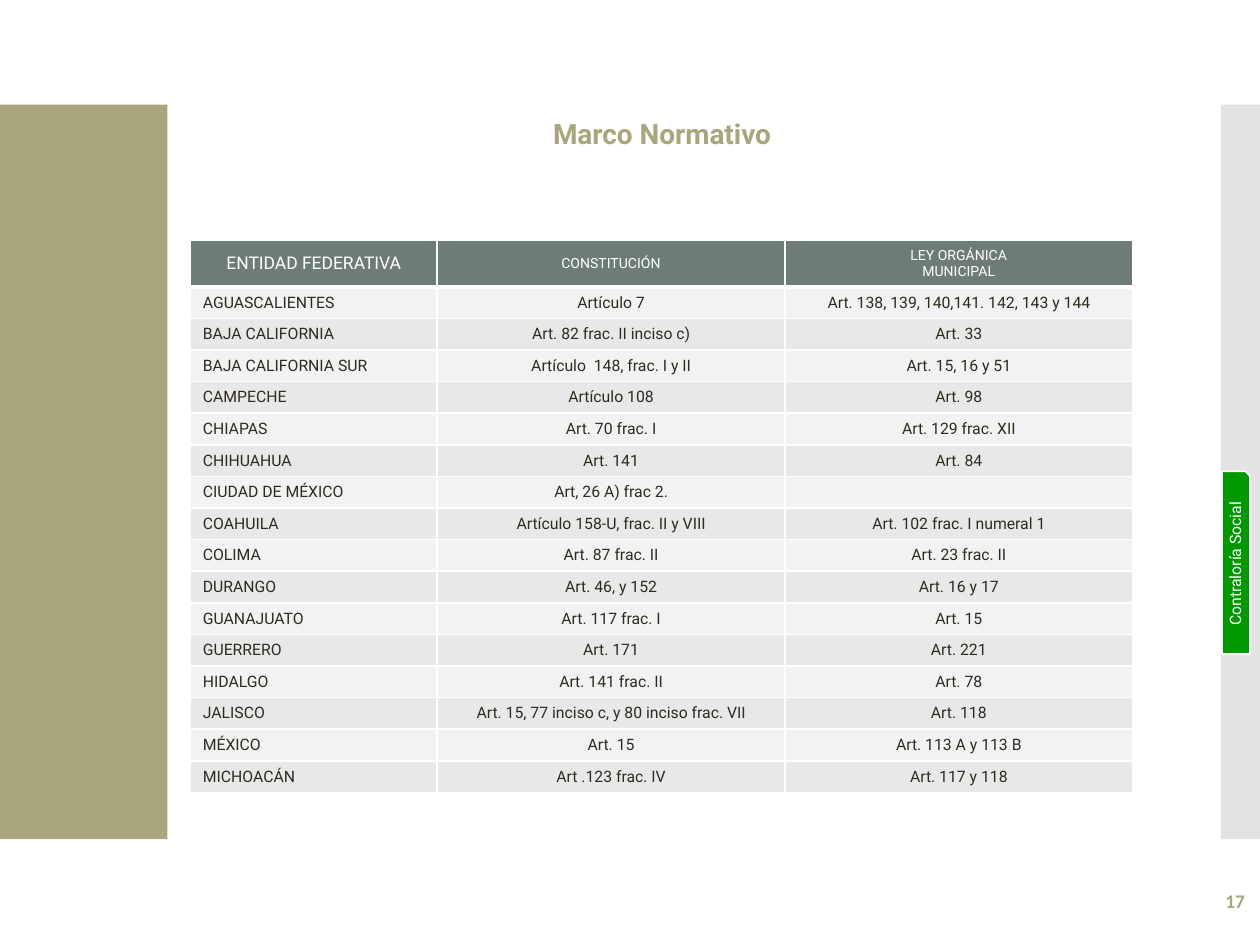
from typing import NamedTuple

from lxml.etree import SubElement
from pptx import Presentation
from pptx.dml.color import RGBColor
from pptx.enum.shapes import MSO_SHAPE
from pptx.enum.text import MSO_ANCHOR, PP_ALIGN
from pptx.oxml.ns import qn
from pptx.util import Inches, Pt

WHITE = RGBColor(0xFF, 0xFF, 0xFF)
OLIVE = RGBColor(0xA9, 0xA5, 0x7C)
SILVER = RGBColor(0xC8, 0xC8, 0xC8)
GREEN = RGBColor(0x00, 0x99, 0x00)
SLATE = RGBColor(0x6D, 0x7D, 0x76)
INK = RGBColor(0x2F, 0x2B, 0x20)
BANDS = (RGBColor(0xF2, 0xF2, 0xF2), RGBColor(0xE8, 0xE8, 0xE8))

COLUMN_WIDTHS = (1.96, 2.76, 2.76)
HEADER_HEIGHT, ROW_HEIGHT = 0.36, 0.25
HEADINGS = (("ENTIDAD FEDERATIVA", 10), ("CONSTITUCIÓN", 8), ("LEY ORGÁNICA\nMUNICIPAL", 8))


class Box(NamedTuple):
    left: float
    top: float
    width: float
    height: float

    def lengths(self) -> tuple:
        return tuple(Inches(value) for value in self)


class State(NamedTuple):
    name: str
    constitution: str
    municipal_law: str


STATES = (
    State("AGUASCALIENTES", "Artículo 7", "Art. 138, 139, 140,141. 142, 143 y 144"),
    State("BAJA CALIFORNIA", "Art. 82 frac. II inciso c)", "Art. 33"),
    State("BAJA CALIFORNIA SUR", "Artículo  148, frac. I y II", "Art. 15, 16 y 51"),
    State("CAMPECHE", "Artículo 108", "Art. 98"),
    State("CHIAPAS", "Art. 70 frac. I", "Art. 129 frac. XII"),
    State("CHIHUAHUA", "Art. 141", "Art. 84"),
    State("CIUDAD DE MÉXICO", "Art, 26 A) frac 2.", ""),
    State("COAHUILA", "Artículo 158-U, frac. II y VIII", "Art. 102 frac. I numeral 1"),
    State("COLIMA", "Art. 87 frac. II", "Art. 23 frac. II"),
    State("DURANGO", "Art. 46, y 152", "Art. 16 y 17"),
    State("GUANAJUATO", "Art. 117 frac. I", "Art. 15"),
    State("GUERRERO", "Art. 171", "Art. 221"),
    State("HIDALGO", "Art. 141 frac. II", "Art. 78"),
    State("JALISCO", "Art. 15, 77 inciso c, y 80 inciso frac. VII", "Art. 118"),
    State("MÉXICO", "Art. 15", "Art. 113 A y 113 B"),
    State("MICHOACÁN", "Art .123 frac. IV", "Art. 117 y 118"),
)


def write(frame, text: str, *, size: float, color: RGBColor, font: str = "Roboto",
          bold: bool = False, align=PP_ALIGN.CENTER) -> None:
    """Fill a text frame, one paragraph for each line of the text."""
    for index, line in enumerate(text.split("\n")):
        paragraph = frame.add_paragraph() if index else frame.paragraphs[0]
        paragraph.alignment = align
        if not line:
            # An empty cell needs its own text size to keep the row height
            SubElement(paragraph._p, qn("a:endParaRPr"), sz=str(int(size * 100)))
            continue
        run = paragraph.add_run()
        run.text = line
        run.font.name = font
        run.font.size = Pt(size)
        run.font.bold = bold
        run.font.color.rgb = color


def add_panel(slide, box: Box, fill: RGBColor, preset=MSO_SHAPE.RECTANGLE):
    panel = slide.shapes.add_shape(preset, *box.lengths())
    panel.shadow.inherit = False
    panel.fill.solid()
    panel.fill.fore_color.rgb = fill
    panel.line.fill.background()
    return panel


def add_text(slide, box: Box, text: str, *, anchor=MSO_ANCHOR.TOP, **text_format) -> None:
    frame = slide.shapes.add_textbox(*box.lengths()).text_frame
    frame.word_wrap = True
    frame.vertical_anchor = anchor
    write(frame, text, **text_format)


def add_side_tab(slide, box: Box, text: str) -> None:
    """Draw the section tab, its label reading upwards."""
    tab = add_panel(slide, box, GREEN, MSO_SHAPE.SNIP_1_RECTANGLE)
    tab.line.color.rgb = WHITE
    tab.line.width = Pt(0.85)
    frame = tab.text_frame
    frame.margin_left = frame.margin_right = frame.margin_top = frame.margin_bottom = 0
    frame.vertical_anchor = MSO_ANCHOR.MIDDLE
    frame._txBody.bodyPr.set("vert", "vert270")
    write(frame, text, size=9, color=WHITE)


def style_cell(cell, fill: RGBColor, bottom_width: float = 1) -> None:
    """Set the fill, the white borders and the anchor of a cell."""
    cell.vertical_anchor = MSO_ANCHOR.MIDDLE
    properties = cell._tc.get_or_add_tcPr()
    for edge, width in (("L", 1), ("R", 1), ("T", 1), ("B", bottom_width)):
        border = SubElement(properties, qn(f"a:ln{edge}"), w=str(Pt(width)))
        SubElement(SubElement(border, qn("a:solidFill")), qn("a:srgbClr"), val=str(WHITE))
    cell.fill.solid()
    cell.fill.fore_color.rgb = fill


def add_state_table(slide, left: float, top: float) -> None:
    height = HEADER_HEIGHT + ROW_HEIGHT * len(STATES)
    box = Box(left, top, sum(COLUMN_WIDTHS), height)
    table = slide.shapes.add_table(len(STATES) + 1, len(COLUMN_WIDTHS), *box.lengths()).table
    for column, width in zip(table.columns, COLUMN_WIDTHS):
        column.width = Inches(width)
    for index, row in enumerate(table.rows):
        row.height = Inches(ROW_HEIGHT if index else HEADER_HEIGHT)

    for column, (heading, size) in enumerate(HEADINGS):
        cell = table.cell(0, column)
        style_cell(cell, SLATE, bottom_width=3)
        write(cell.text_frame, heading, size=size, color=WHITE)
    for index, state in enumerate(STATES):
        for column, text in enumerate(state):
            cell = table.cell(index + 1, column)
            style_cell(cell, BANDS[index % 2])
            align = PP_ALIGN.CENTER if column else PP_ALIGN.LEFT
            write(cell.text_frame, text, size=9, color=INK, align=align)


def main() -> None:
    deck = Presentation()
    deck.slide_width, deck.slide_height = Inches(10), Inches(7.5)
    slide = deck.slides.add_slide(deck.slide_layouts[6])

    add_panel(slide, Box(0, 0.83, 1.33, 5.83), OLIVE)
    right_band = add_panel(slide, Box(9.69, 0.83, 0.31, 5.83), SILVER)
    band_color = right_band.fill._xPr.find(qn("a:solidFill"))[0]
    SubElement(band_color, qn("a:alpha"), val="50000")
    add_side_tab(slide, Box(9.7, 3.74, 0.22, 1.45), "Contraloría Social")

    add_text(slide, Box(1.33, 0.88, 7.85, 0.37), "Marco Normativo",
             size=16, color=OLIVE, bold=True)
    add_text(slide, Box(8.72, 6.95, 1.26, 0.4), "17", anchor=MSO_ANCHOR.MIDDLE,
             size=11, color=OLIVE, font="Calibri", bold=True, align=PP_ALIGN.RIGHT)
    add_state_table(slide, 1.51, 1.91)

    deck.save("out.pptx")


if __name__ == "__main__":
    main()
